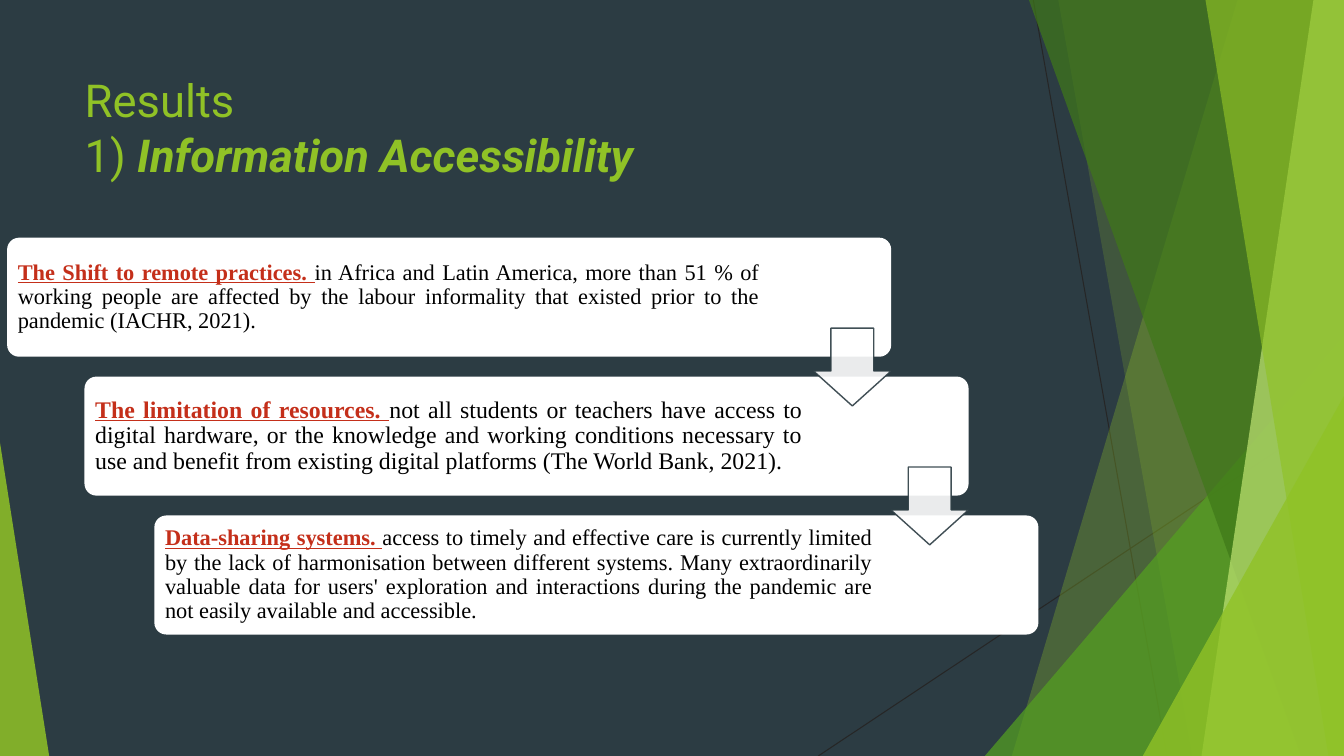
from dataclasses import dataclass

from lxml.etree import SubElement
from pptx import Presentation
from pptx.dml.color import RGBColor
from pptx.enum.shapes import MSO_CONNECTOR as Connector, MSO_SHAPE as Shape
from pptx.enum.text import MSO_ANCHOR as Anchor, MSO_AUTO_SIZE as AutoSize, PP_ALIGN as Align
from pptx.oxml.ns import qn
from pptx.util import Cm, Pt


@dataclass(frozen=True)
class Theme:
    """Colours, fonts and type sizes of the slide."""
    background: str = "2C3C43"
    lime: str = "90C226"
    pale_lime: str = "C0E474"
    green: str = "54A021"
    dark_green: str = "3F7819"
    hairline: str = "262626"
    card: str = "FFFFFF"
    lead: str = "C42F1A"
    text: str = "000000"
    title_font: str = "Roboto"
    body_font: str = "Times New Roman"
    title_size: float = 32.4
    body_size: float = 16
    large_body_size: float = 17


THEME = Theme()
SLIDE_WIDTH, SLIDE_HEIGHT = 33.87, 19.05
CARD_WIDTH, CARD_HEIGHT = 22.28, 3.0
CARD_TOP, CARD_STEP = 5.99, 3.5
CARD_PADDING, TEXT_INSET = 0.09, 0.18
ARROW_SIZE, ARROW_DROP = 1.96, 2.28

HAIRLINES = [(26.04, 0, 29.41, SLIDE_HEIGHT), (SLIDE_WIDTH, 10.24, 20.62, SLIDE_HEIGHT)]
BACK_FACETS = [(31.19, 25.5, THEME.lime, 30), (26.67, 30.05, THEME.lime, 20)]
FRONT_FACETS = [
    (25.93, 32.79, THEME.dark_green, 70),
    (33.1, 30.28, THEME.pale_lime, 70),
    (30.38, 33.48, THEME.lime, 65),
]
CARDS = [
    (0.18, 19.05, THEME.body_size, "The Shift to remote practices. ",
     "in Africa and Latin America, more than 51 % of working people are affected by the "
     "labour informality that existed prior to the pandemic (IACHR, 2021)."),
    (2.13, 18.19, THEME.large_body_size, "The limitation of resources. ",
     "not all students or teachers have access to digital hardware, or the knowledge and "
     "working conditions necessary to use and benefit from existing digital platforms "
     "(The World Bank, 2021)."),
    (3.89, 18.19, THEME.body_size, "Data-sharing systems. ",
     "access to timely and effective care is currently limited by the lack of harmonisation "
     "between different systems. Many extraordinarily valuable data for users' exploration "
     "and interactions during the pandemic are not easily available and accessible."),
]


def paint(shape, color, opacity=100, outline=None):
    """Fill a shape, outline it if asked, and apply the opacity to both."""
    shape.shadow.inherit = False
    shape.fill.solid()
    shape.fill.fore_color.rgb = RGBColor.from_string(color)
    if outline:
        shape.line.color.rgb = RGBColor.from_string(outline)
        shape.line.width = Pt(1)
    else:
        shape.line.fill.background()
    if opacity < 100:
        for element in shape._element.spPr.iter(qn("a:srgbClr")):
            SubElement(element, qn("a:alpha")).set("val", str(opacity * 1000))


def add_preset(slide, preset, left, top, width, height, adjustments):
    """Add a preset shape with its adjustments."""
    shape = slide.shapes.add_shape(preset, Cm(left), Cm(top), Cm(width), Cm(height))
    for index, value in enumerate(adjustments):
        shape.adjustments[index] = value
    return shape


def add_run(paragraph, text, font, size, color, bold=False, italic=False, underline=False):
    """Add one formatted run to a paragraph."""
    run = paragraph.add_run()
    run.text = text
    run.font.name = font
    run.font.size = Pt(size)
    run.font.color.rgb = RGBColor.from_string(color)
    run.font.bold, run.font.italic, run.font.underline = bold, italic, underline


def add_hairline(slide, start_x, start_y, end_x, end_y):
    """Add a thin background line."""
    line = slide.shapes.add_connector(
        Connector.STRAIGHT, Cm(start_x), Cm(start_y), Cm(end_x), Cm(end_y))
    line.line.color.rgb = RGBColor.from_string(THEME.hairline)
    line.line.width = Pt(0.75)
    SubElement(line._element.spPr, qn("a:effectLst"))


def add_facet(slide, top_x, bottom_x, color, opacity):
    """Add a full-height facet that reaches the right edge of the slide."""
    builder = slide.shapes.build_freeform(Cm(top_x), Cm(0))
    corners = [(SLIDE_WIDTH, 0), (SLIDE_WIDTH, SLIDE_HEIGHT), (bottom_x, SLIDE_HEIGHT)]
    builder.add_line_segments([(Cm(x), Cm(y)) for x, y in corners], close=True)
    paint(builder.convert_to_shape(), color, opacity)


def add_corner(slide, left, top, width, apex, color, opacity):
    """Add a triangle that stands on the bottom edge of the slide."""
    corner = add_preset(slide, Shape.ISOSCELES_TRIANGLE, left, top, width,
                        SLIDE_HEIGHT - top, [apex])
    paint(corner, color, opacity)


def add_background(slide):
    """Colour the background and layer its lines and facets."""
    slide.background.fill.solid()
    slide.background.fill.fore_color.rgb = RGBColor.from_string(THEME.background)
    for hairline in HAIRLINES:
        add_hairline(slide, *hairline)
    for facet in BACK_FACETS:
        add_facet(slide, *facet)
    add_corner(slide, 24.82, 8.46, 9.05, 1, THEME.green, 72)
    for facet in FRONT_FACETS:
        add_facet(slide, *facet)
    add_corner(slide, 28.8, 9.98, 5.07, 1, THEME.lime, 80)
    add_corner(slide, 0, 11.15, 1.24, 0, THEME.lime, 85)


def fill_title(slide):
    """Place and format the title."""
    title = slide.shapes.title
    title.left, title.top, title.width, title.height = Cm(1.88), Cm(1.7), Cm(23.88), Cm(3.66)
    frame = title.text_frame
    frame.auto_size = AutoSize.NONE
    frame.vertical_anchor = Anchor.TOP
    paragraph = frame.paragraphs[0]
    paragraph.alignment = Align.LEFT
    style = (THEME.title_font, THEME.title_size, THEME.lime)
    add_run(paragraph, "Results", *style)
    paragraph.add_line_break()
    add_run(paragraph, "1) ", *style)
    add_run(paragraph, "Information Accessibility", *style, bold=True, italic=True)


def add_card(slide, left, top, text_width, size, lead, detail):
    """Add a rounded card with an underlined lead and its detail."""
    card = add_preset(slide, Shape.ROUNDED_RECTANGLE, left, top, CARD_WIDTH, CARD_HEIGHT, [0.1])
    paint(card, THEME.card)
    box = slide.shapes.add_textbox(Cm(left + CARD_PADDING), Cm(top + CARD_PADDING),
                                   Cm(text_width), Cm(CARD_HEIGHT - 2 * CARD_PADDING))
    frame = box.text_frame
    frame.word_wrap = True
    frame.vertical_anchor = Anchor.MIDDLE
    frame.margin_left = frame.margin_right = Cm(TEXT_INSET)
    frame.margin_top = frame.margin_bottom = Cm(TEXT_INSET)
    paragraph = frame.paragraphs[0]
    paragraph.alignment = Align.JUSTIFY
    paragraph.line_spacing = 0.9
    add_run(paragraph, lead, THEME.body_font, size, THEME.lead, bold=True, underline=True)
    add_run(paragraph, detail, THEME.body_font, size, THEME.text)


def add_step_arrow(slide, card_left, card_top):
    """Add the arrow that leads from a card to the next one."""
    arrow = add_preset(slide, Shape.DOWN_ARROW, card_left + CARD_WIDTH - ARROW_SIZE,
                       card_top + ARROW_DROP, ARROW_SIZE, ARROW_SIZE, [0.55, 0.45])
    arrow.adjustments[0], arrow.adjustments[1] = 0.55, 0.45
    paint(arrow, THEME.card, 90, THEME.background)


def main():
    """Build the slide and save it."""
    presentation = Presentation()
    presentation.slide_width, presentation.slide_height = Cm(SLIDE_WIDTH), Cm(SLIDE_HEIGHT)
    slide = presentation.slides.add_slide(presentation.slide_layouts[5])
    add_background(slide)
    fill_title(slide)
    tops = [CARD_TOP + CARD_STEP * index for index in range(len(CARDS))]
    for top, (left, *content) in zip(tops, CARDS):
        add_card(slide, left, top, *content)
    for top, (left, *_) in zip(tops, CARDS[:-1]):
        add_step_arrow(slide, left, top)
    presentation.save("out.pptx")


if __name__ == "__main__":
    main()
